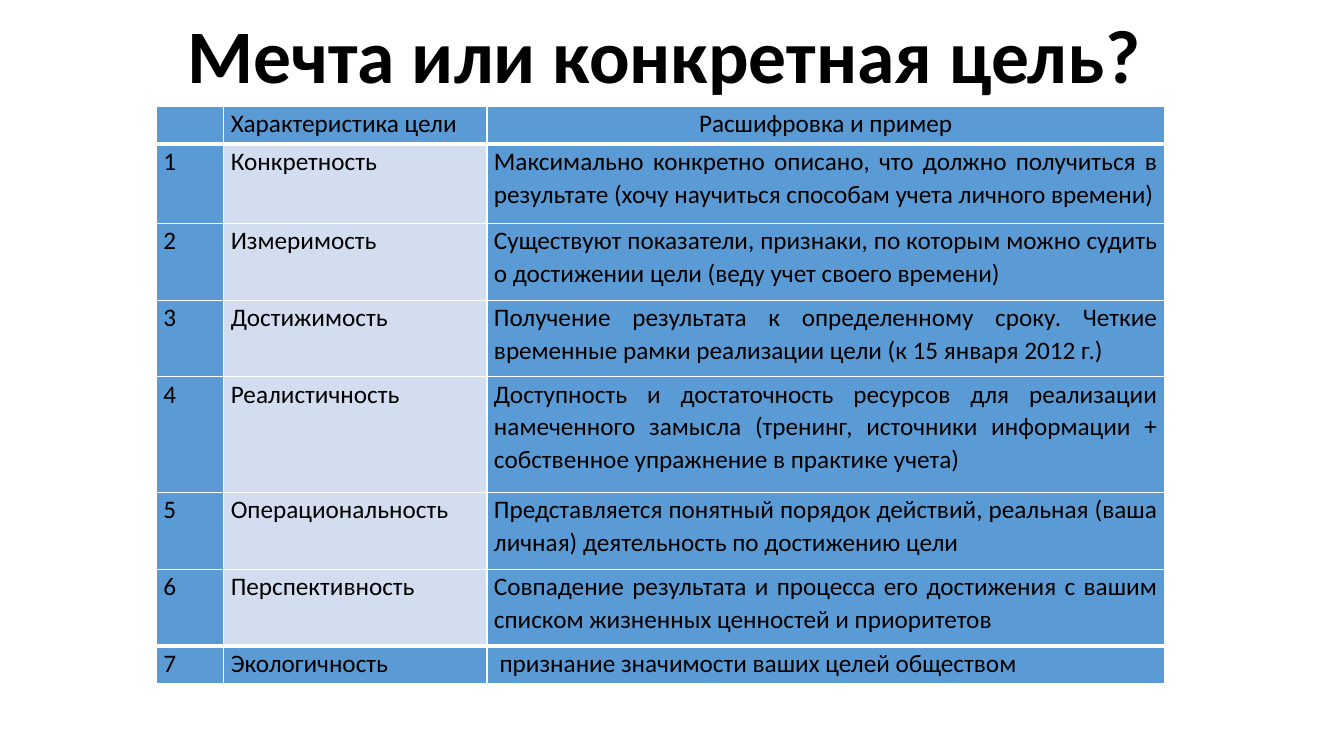
from lxml.etree import SubElement
from pptx import Presentation
from pptx.dml.color import RGBColor
from pptx.enum.text import MSO_ANCHOR, MSO_AUTO_SIZE, PP_ALIGN
from pptx.oxml.ns import qn
from pptx.util import Inches, Pt

COLORS = {"text": "000000", "blue": "5B9BD5", "pale": "D2DEEF", "line": "FFFFFF"}
COL_WIDTHS = [0.67, 2.61, 6.72]
ROW_HEIGHTS = [0.37, 0.79, 0.76, 0.76, 1.15, 0.76, 0.76, 0.37]
HEADER = ["", "Характеристика цели", "Расшифровка и пример"]
GOALS = [
    ("Конкретность", "Максимально конкретно описано, что должно получиться в "
     "результате (хочу научиться способам учета личного времени)"),
    ("Измеримость", "Существуют показатели, признаки, по которым можно судить "
     "о достижении цели (веду учет своего времени)"),
    ("Достижимость", "Получение результата к определенному сроку. Четкие "
     "временные рамки реализации цели (к 15 января 2012 г.)"),
    ("Реалистичность", "Доступность и достаточность ресурсов для реализации "
     "намеченного замысла (тренинг, источники информации + "
     "собственное упражнение в практике учета)"),
    ("Операциональность", "Представляется понятный порядок действий, реальная (ваша "
     "личная) деятельность по достижению цели"),
    ("Перспективность", "Совпадение результата и процесса его достижения с вашим "
     "списком жизненных ценностей и приоритетов"),
    ("Экологичность", " признание значимости ваших целей обществом"),
]


class SlideBuilder:
    font = "Calibri"

    def __init__(self, prs):
        self.slide = prs.slides.add_slide(prs.slide_layouts[5])

    def format(self, p, size, align, spacing, bold=False):
        p.alignment, p.line_spacing = align, spacing
        p.font.name, p.font.size, p.font.bold = self.font, Pt(size), bold
        p.font.color.rgb = RGBColor.from_string(COLORS["text"])

    def title(self, text, left, top, width, height):
        sp = self.slide.shapes.title
        sp.left, sp.top = Inches(left), Inches(top)
        sp.width, sp.height = Inches(width), Inches(height)
        tf = sp.text_frame
        tf.text = text
        tf.word_wrap, tf.auto_size = True, MSO_AUTO_SIZE.NONE
        tf.vertical_anchor = MSO_ANCHOR.MIDDLE
        self.format(tf.paragraphs[0], 54, PP_ALIGN.CENTER, 0.9, bold=True)

    def borders(self, cell, top, bottom):
        tc_pr = cell._tc.get_or_add_tcPr()
        for side, width in zip("LRTB", (1, 1, top, bottom)):
            ln = SubElement(tc_pr, qn(f"a:ln{side}"), w=str(Pt(width)))
            fill = SubElement(ln, qn("a:solidFill"))
            SubElement(fill, qn("a:srgbClr"), val=COLORS["line"])

    def cell(self, cell, text, align, color, top, bottom):
        cell.margin_left = cell.margin_right = Inches(0.07)
        cell.margin_top = cell.margin_bottom = 0
        cell.text = text
        self.format(cell.text_frame.paragraphs[0], 18, align, 1.07)
        self.borders(cell, top, bottom)
        cell.fill.solid()
        cell.fill.fore_color.rgb = RGBColor.from_string(COLORS[color])

    def table(self, rows, left, top):
        """Draw the rows; thick rules set off the first and the last one."""
        last = len(rows) - 1
        table = self.slide.shapes.add_table(
            len(rows), len(COL_WIDTHS), Inches(left), Inches(top),
            Inches(sum(COL_WIDTHS)), Inches(sum(ROW_HEIGHTS))).table
        for col, width in zip(table.columns, COL_WIDTHS):
            col.width = Inches(width)
        for i, (row, height) in enumerate(zip(rows, ROW_HEIGHTS)):
            table.rows[i].height = Inches(height)
            for j, text in enumerate(row):
                align = PP_ALIGN.CENTER if (i, j) == (0, 2) else PP_ALIGN.JUSTIFY
                color = "pale" if j == 1 and 0 < i < last else "blue"
                self.cell(table.cell(i, j), text, align, color,
                          top=3 if i in (1, last) else 1,
                          bottom=3 if i in (0, last - 1) else 1)


def main():
    prs = Presentation()
    prs.slide_width, prs.slide_height = Inches(13.33), Inches(7.5)
    s = SlideBuilder(prs)
    s.title("Мечта или конкретная цель? ", 0.92, 0, 11.5, 1.17)
    goals = [(str(n), *goal) for n, goal in enumerate(GOALS, 1)]
    s.table([HEADER, *goals], 1.55, 1.06)
    prs.save("out.pptx")


if __name__ == "__main__":
    main()
